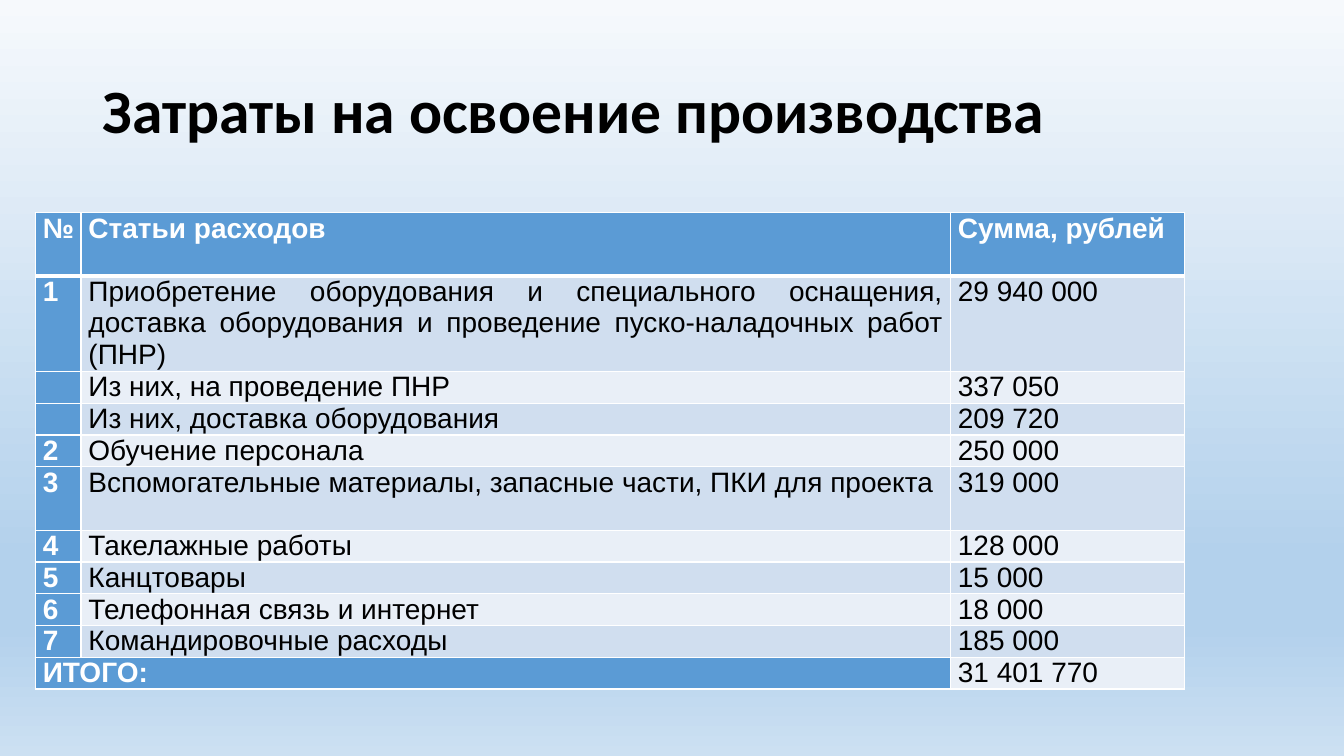
from lxml.etree import SubElement
from pptx import Presentation
from pptx.dml.color import RGBColor
from pptx.enum.text import MSO_ANCHOR, PP_ALIGN
from pptx.oxml.ns import qn
from pptx.util import Cm, Pt

COLORS = {
    "sky_top": "F6F9FC",
    "sky_deep": "B3D1EC",
    "sky_bottom": "CCE0F2",
    "accent": "5B9BD5",
    "band_dark": "D0DEEF",
    "band_light": "E9EFF7",
    "white": "FFFFFF",
    "black": "000000",
}
BACKGROUND_STOPS = [(0, "sky_top"), (74, "sky_deep"), (83, "sky_deep"), (100, "sky_bottom")]
COLUMN_WIDTHS = [1.15, 21.91, 5.9]
LINE_HEIGHT = 0.8
EXPENSES = [
    (2, "№", "Статьи расходов", "Сумма, рублей"),
    (3, "1", "Приобретение оборудования и специального оснащения, доставка оборудования "
             "и проведение пуско-наладочных работ (ПНР)", "29 940 000"),
    (1, "", "Из них, на проведение ПНР", "337 050"),
    (1, "", "Из них, доставка оборудования", "209 720"),
    (1, "2", "Обучение персонала", "250 000"),
    (2, "3", "Вспомогательные материалы, запасные части, ПКИ для проекта", "319 000"),
    (1, "4", "Такелажные работы", "128 000"),
    (1, "5", "Канцтовары", "15 000"),
    (1, "6", "Телефонная связь и интернет", "18 000"),
    (1, "7", "Командировочные расходы", "185 000"),
    (1, "ИТОГО:", "", "31 401 770"),
]


def add_run(paragraph, text, font_name, size, color, bold):
    run = paragraph.add_run()
    run.text = text
    run.font.name = font_name
    run.font.size = Pt(size)
    run.font.bold = bold
    run.font.color.rgb = RGBColor.from_string(COLORS[color])


def set_borders(cell, bottom_width):
    properties = cell._tc.get_or_add_tcPr()
    widths = {"a:lnL": 1, "a:lnR": 1, "a:lnT": 1, "a:lnB": bottom_width}
    for position, (tag, width) in enumerate(widths.items()):
        line = SubElement(properties, qn(tag), w=str(Pt(width)))
        fill = SubElement(line, qn("a:solidFill"))
        SubElement(fill, qn("a:srgbClr"), val=COLORS["white"])
        properties.insert(position, line)


presentation = Presentation()
presentation.slide_width = Cm(33.87)
presentation.slide_height = Cm(19.05)
slide = presentation.slides.add_slide(presentation.slide_layouts[5])

background_fill = slide.background.fill
background_fill.gradient()
background_fill.gradient_angle = 270
stop_list = next(slide.element.iter(qn("a:gsLst")))
for stop in list(stop_list):
    stop_list.remove(stop)
for percent, color in BACKGROUND_STOPS:
    stop = SubElement(stop_list, qn("a:gs"), pos=str(percent * 1000))
    SubElement(stop, qn("a:srgbClr"), val=COLORS[color])

title = slide.shapes.title
title.left, title.top, title.width, title.height = Cm(2.33), Cm(1.01), Cm(29.21), Cm(3.68)
title.text_frame.vertical_anchor = MSO_ANCHOR.MIDDLE
title.text_frame.word_wrap = True
title_paragraph = title.text_frame.paragraphs[0]
title_paragraph.alignment = PP_ALIGN.LEFT
title_paragraph.line_spacing = 0.9
add_run(title_paragraph, "Затраты на освоение производства", "Calibri", 44, "black", True)

total_lines = sum(row[0] for row in EXPENSES)
table = slide.shapes.add_table(
    len(EXPENSES), len(COLUMN_WIDTHS), Cm(0.89), Cm(5.36),
    Cm(sum(COLUMN_WIDTHS)), Cm(total_lines * LINE_HEIGHT),
).table
for column, width in zip(table.columns, COLUMN_WIDTHS):
    column.width = Cm(width)

for row_index, (line_count, *texts) in enumerate(EXPENSES):
    table.rows[row_index].height = Cm(line_count * LINE_HEIGHT)
    is_header = row_index == 0
    band = "band_dark" if row_index % 2 else "band_light"
    for column_index, text in enumerate(texts):
        cell = table.cell(row_index, column_index)
        is_accent = is_header or column_index == 0
        cell.margin_left = cell.margin_right = Cm(0.19)
        cell.margin_top = cell.margin_bottom = 0
        cell.fill.solid()
        cell.fill.fore_color.rgb = RGBColor.from_string(COLORS["accent" if is_accent else band])
        set_borders(cell, 3 if is_header else 1)
        paragraph = cell.text_frame.paragraphs[0]
        paragraph.alignment = PP_ALIGN.JUSTIFY
        if text:
            add_run(paragraph, text, "Arial", 20, "white" if is_accent else "black", is_accent)

total_row = len(EXPENSES) - 1
table.cell(total_row, 0).merge(table.cell(total_row, 1))

presentation.save("out.pptx")
